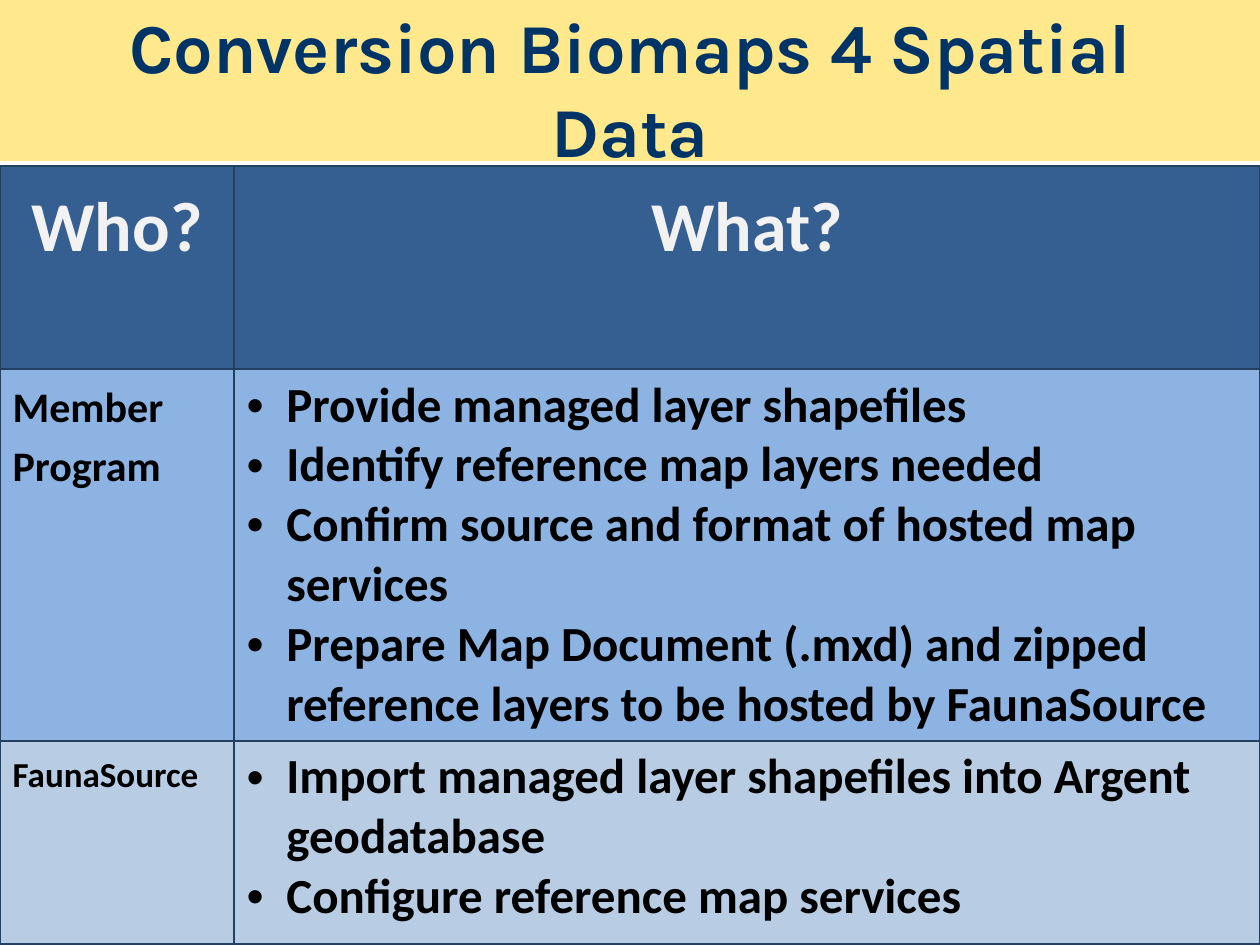
from lxml import etree
from pptx import Presentation
from pptx.dml.color import RGBColor
from pptx.enum.shapes import MSO_SHAPE
from pptx.enum.text import MSO_ANCHOR, PP_ALIGN
from pptx.oxml.ns import qn
from pptx.util import Cm, Pt

CENTER, LEFT = PP_ALIGN.CENTER, PP_ALIGN.LEFT
MIDDLE = MSO_ANCHOR.MIDDLE
RECTANGLE = MSO_SHAPE.RECTANGLE

COLORS = {
    "band": "FFE98C", "title": "003366", "border": "244061",
    "header": "365F91", "header text": "F2F2F2",
    "member": "8DB3E2", "host": "B8CCE4", "text": "000000",
}

TITLE = "Conversion Biomaps 4 Spatial Data"
HEADINGS = ("Who?", "What?")
DUTIES = [
    ("Member Program", 24, [
        "Provide managed layer shapefiles",
        "Identify reference map layers needed",
        "Confirm source and format of hosted map services",
        "Prepare Map Document (.mxd) and zipped reference layers "
        "to be hosted by FaunaSource",
    ], "member"),
    ("FaunaSource", 20, [
        "Import managed layer shapefiles into Argent geodatabase",
        "Configure reference map services",
    ], "host"),
]

TITLE_FORMAT = {"name": "Karla", "size": Pt(40), "bold": True}
HEADING_FORMAT = {"name": "Calibri", "size": Pt(40), "bold": True}
DUTY_FORMAT = {"name": "Calibri", "size": Pt(28), "bold": True}

COLUMN_WIDTHS = (Cm(4.72), Cm(20.68))
ROW_HEIGHTS = (Cm(4.09), Cm(7.49), Cm(4.09))
TABLE_TOP = Cm(3.35)
BULLET_INDENT = Cm(0.8)


def color(name):
    return RGBColor.from_string(COLORS[name])


def format_para(para, text, values, color_name, align=LEFT, spacing=None):
    para.alignment = align
    para.line_spacing = spacing
    span = para.add_run()
    span.text = text
    for name, value in values.items():
        setattr(span.font, name, value)
    span.font.color.rgb = color(color_name)


def add_bullet(para):
    properties = para._p.get_or_add_pPr()
    properties.set("marL", str(BULLET_INDENT))
    properties.set("indent", str(-BULLET_INDENT))
    etree.SubElement(properties, qn("a:buFont"), typeface="Arial")
    etree.SubElement(properties, qn("a:buChar"), char="•")


def style_cell(cell, fill_name):
    """Fill the cell and rule all four of its sides."""
    cell.fill.solid()
    cell.fill.fore_color.rgb = color(fill_name)
    properties = cell._tc.get_or_add_tcPr()
    for index, side in enumerate(("lnL", "lnR", "lnT", "lnB")):
        line = etree.Element(qn(f"a:{side}"), w=str(Pt(1)))
        fill = etree.SubElement(line, qn("a:solidFill"))
        etree.SubElement(fill, qn("a:srgbClr"), val=COLORS["border"])
        properties.insert(index, line)


def add_title(page):
    band = page.shapes.add_shape(RECTANGLE, 0, 0, deck.slide_width, Cm(3.25))
    band.shadow.inherit = False
    band.fill.solid()
    band.fill.fore_color.rgb = color("band")
    band.line.fill.background()

    title = page.shapes.title
    band._element.addnext(title._element)
    title.left, title.top = Cm(1.27), Cm(0.76)
    title.width, title.height = Cm(22.86), Cm(2)
    box = title.text_frame
    box.word_wrap = True
    box.vertical_anchor = MIDDLE
    box.margin_left = box.margin_right = Cm(0.6)
    format_para(box.paragraphs[0], TITLE, TITLE_FORMAT, "title", CENTER)


def add_duty_table(page):
    table = page.shapes.add_table(
        len(ROW_HEIGHTS), len(COLUMN_WIDTHS), 0, TABLE_TOP,
        sum(COLUMN_WIDTHS), sum(ROW_HEIGHTS)).table
    table.first_row = table.horz_banding = False
    for column, width in zip(table.columns, COLUMN_WIDTHS):
        column.width = width
    for row, height in zip(table.rows, ROW_HEIGHTS):
        row.height = height

    for cell, heading in zip(table.rows[0].cells, HEADINGS):
        style_cell(cell, "header")
        format_para(cell.text_frame.paragraphs[0], heading, HEADING_FORMAT,
                    "header text", CENTER, 1.15)

    for index, (who, size, tasks, fill_name) in enumerate(DUTIES, start=1):
        who_cell, task_cell = table.rows[index].cells
        style_cell(who_cell, fill_name)
        style_cell(task_cell, fill_name)
        format_para(who_cell.text_frame.paragraphs[0], who,
                    DUTY_FORMAT | {"size": Pt(size)}, "text", spacing=1.15)
        box = task_cell.text_frame
        for number, task in enumerate(tasks):
            para = box.add_paragraph() if number else box.paragraphs[0]
            add_bullet(para)
            format_para(para, task, DUTY_FORMAT, "text")


deck = Presentation()
deck.slide_width, deck.slide_height = Cm(25.4), Cm(19.05)
page = deck.slides.add_slide(deck.slide_layouts[5])
add_title(page)
add_duty_table(page)
deck.save("out.pptx")
